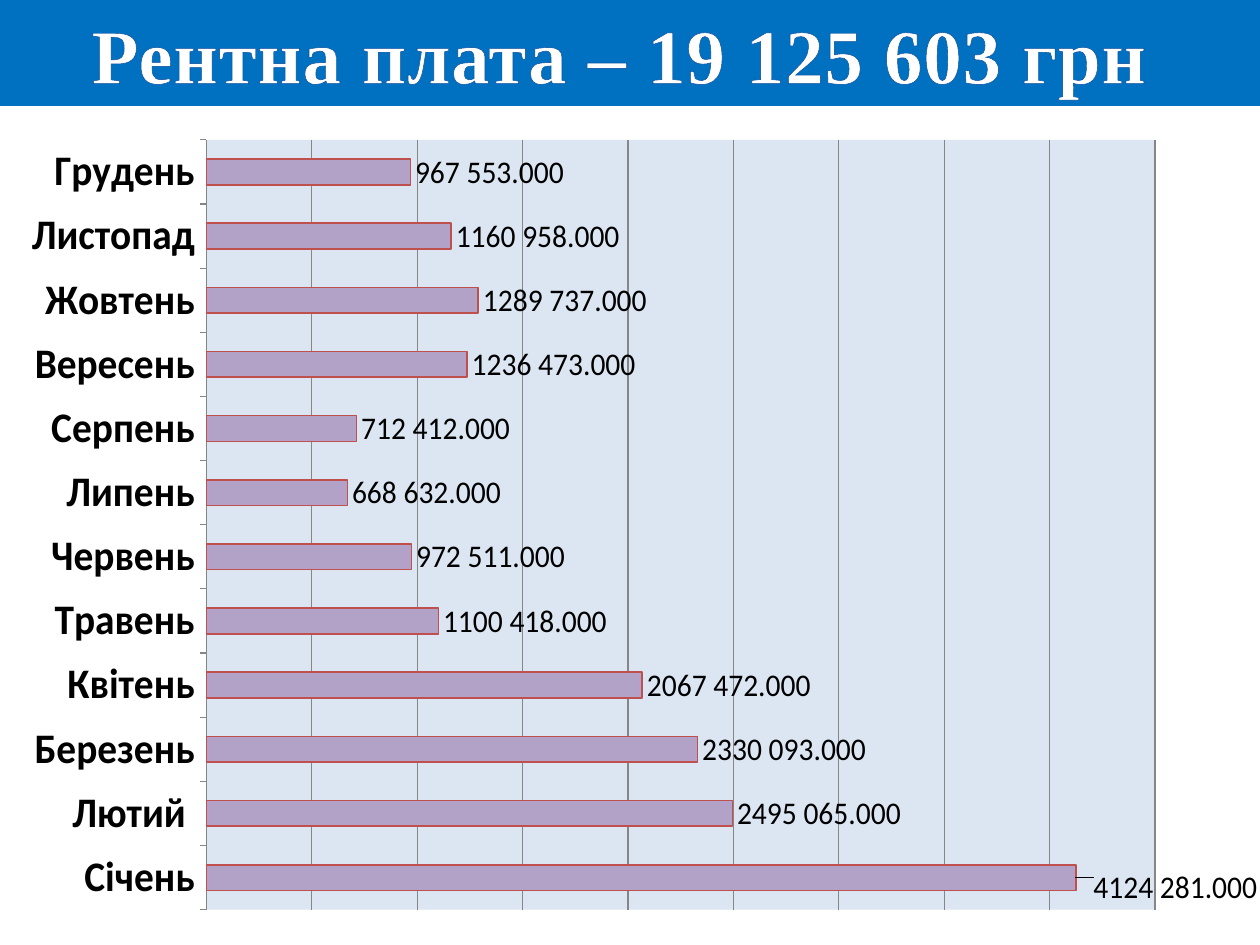
from lxml import etree
from pptx import Presentation
from pptx.chart.data import CategoryChartData
from pptx.dml.color import RGBColor
from pptx.enum.chart import XL_CHART_TYPE, XL_LABEL_POSITION, XL_TICK_LABEL_POSITION, XL_TICK_MARK
from pptx.enum.shapes import MSO_SHAPE
from pptx.enum.text import MSO_ANCHOR, MSO_AUTO_SIZE, PP_ALIGN
from pptx.oxml import parse_xml
from pptx.oxml.ns import qn
from pptx.util import Pt

BAR_CLUSTERED = XL_CHART_TYPE.BAR_CLUSTERED
OUTSIDE_END = XL_LABEL_POSITION.OUTSIDE_END
LOW = XL_TICK_LABEL_POSITION.LOW
TICK_OUTSIDE, TICK_NONE = XL_TICK_MARK.OUTSIDE, XL_TICK_MARK.NONE
RECTANGLE = MSO_SHAPE.RECTANGLE
MIDDLE = MSO_ANCHOR.MIDDLE
FIT_SHAPE = MSO_AUTO_SIZE.SHAPE_TO_FIT_TEXT
CENTER = PP_ALIGN.CENTER

CHART_NS = 'xmlns:c="http://schemas.openxmlformats.org/drawingml/2006/chart"'
DRAWING_NS = 'xmlns:a="http://schemas.openxmlformats.org/drawingml/2006/main"'
NUMBER_FORMAT = r"#\ ##0.000"
PAYMENTS = {
    "Січень": 4124281,
    "Лютий ": 2495065,
    "Березень": 2330093,
    "Квітень": 2067472,
    "Травень": 1100418,
    "Червень": 972511,
    "Липень": 668632,
    "Серпень": 712412,
    "Вересень": 1236473,
    "Жовтень": 1289737,
    "Листопад": 1160958,
    "Грудень": 967553,
}


def color(hex_value):
    return RGBColor.from_string(hex_value)


def style_line(line, hex_value, width):
    line.color.rgb = color(hex_value)
    line.width = Pt(width)


def style_font(font, name, size, hex_value, bold=False):
    font.name = name
    font.size = Pt(size)
    font.bold = bold
    font.color.rgb = color(hex_value)


def manual_layout(**settings):
    parts = "".join(f'<c:{key} val="{value}"/>' for key, value in settings.items())
    return parse_xml(f"<c:layout {CHART_NS}><c:manualLayout>{parts}</c:manualLayout></c:layout>")


def style_plot_area(plot_area):
    for layout in plot_area.findall(qn("c:layout")):
        plot_area.remove(layout)
    plot_area.insert(0, manual_layout(layoutTarget="inner", xMode="edge", yMode="edge",
                                      x=0.177, y=0.063, w=0.803, h=0.896))
    plot_area.append(parse_xml(
        f'<c:spPr {CHART_NS} {DRAWING_NS}><a:solidFill><a:srgbClr val="DCE6F2"/>'
        "</a:solidFill></c:spPr>"))


def style_axes(chart):
    months = chart.category_axis
    months.major_tick_mark = TICK_OUTSIDE
    months.tick_label_position = LOW
    style_font(months.tick_labels.font, "Calibri", 24, "000000", bold=True)
    style_line(months.format.line, "868686", 0.75)

    amounts = chart.value_axis
    amounts.visible = False
    amounts.major_tick_mark = TICK_NONE
    amounts.minimum_scale = 0
    amounts.maximum_scale = 4500000
    amounts.major_unit = 500000
    amounts.has_major_gridlines = True
    style_line(amounts.major_gridlines.format.line, "868686", 0.75)
    amounts.tick_labels.number_format = NUMBER_FORMAT
    amounts.tick_labels.number_format_is_linked = False


def label_bars(series):
    """Show values at the bar ends; the January label is moved, with a leader line."""
    labels = series.data_labels
    labels.show_value = True
    labels.position = OUTSIDE_END
    labels.number_format = NUMBER_FORMAT
    labels.number_format_is_linked = False
    style_font(labels.font, "Calibri", 18, "000000")

    january = series.points[0].data_label
    january.position = OUTSIDE_END
    style_font(january.font, "Calibri", 18, "000000")
    series_labels = series._element.find(qn("c:dLbls"))
    index = series_labels.find(qn("c:dLbl")).find(qn("c:idx"))
    index.addnext(parse_xml(
        f'<c:numFmt {CHART_NS} formatCode="{NUMBER_FORMAT}" sourceLinked="0"/>'))
    index.addnext(manual_layout(x=0.011, y=0.011))
    series_labels.append(parse_xml(
        f'<c:extLst {CHART_NS}><c:ext uri="{{CE6537A1-D6FC-4f65-9D91-7224C49458BB}}" '
        'xmlns:c15="http://schemas.microsoft.com/office/drawing/2012/chart">'
        '<c15:showLeaderLines val="1"/></c:ext></c:extLst>'))


def add_payment_chart(slide, left, top, width, height):
    data = CategoryChartData(number_format=NUMBER_FORMAT)
    data.categories = list(PAYMENTS)
    data.add_series("Series 1", list(PAYMENTS.values()))
    chart = slide.shapes.add_chart(
        BAR_CLUSTERED, Pt(left), Pt(top), Pt(width), Pt(height), data).chart
    chart.has_title = False
    chart.has_legend = False
    style_font(chart.font, "Calibri", 18, "000000")
    style_axes(chart)

    plot = chart.plots[0]
    plot.gap_width = 150
    plot.vary_by_categories = False
    series = plot.series[0]
    series.format.fill.solid()
    series.format.fill.fore_color.rgb = color("B3A2C7")
    style_line(series.format.line, "C0504D", 1)
    label_bars(series)
    style_plot_area(chart._chartSpace.chart.plotArea)


def outline_text(run, hex_value, width):
    properties = run.font._element if hasattr(run.font, "_element") else run._r.get_or_add_rPr()
    line = etree.Element(qn("a:ln"), w=str(Pt(width)))
    fill = etree.SubElement(line, qn("a:solidFill"))
    etree.SubElement(fill, qn("a:srgbClr"), val=hex_value)
    properties.insert(0, line)


def add_title_band(slide, left, top, width, height):
    band = slide.shapes.add_shape(RECTANGLE, Pt(left), Pt(top), Pt(width), Pt(height))
    band.shadow.inherit = False
    band.fill.solid()
    band.fill.fore_color.rgb = color("0070C0")
    band.line.fill.background()
    frame = band.text_frame
    frame.word_wrap = True
    frame.auto_size = FIT_SHAPE
    frame.vertical_anchor = MIDDLE
    paragraph = frame.paragraphs[0]
    paragraph.alignment = CENTER
    run = paragraph.add_run()
    run.text = "Рентна плата – 19 125 603 грн "
    style_font(run.font, "Times New Roman", 44, "FFFFFF", bold=True)
    run._r.get_or_add_rPr().set("spc", "50")
    outline_text(run, "054697", 1)


def main():
    presentation = Presentation()
    presentation.slide_width, presentation.slide_height = Pt(720), Pt(540)
    slide = presentation.slides.add_slide(presentation.slide_layouts[6])
    add_payment_chart(slide, -1.5, 49, 720, 491)
    add_title_band(slide, 0, 0, 720, 60.5)
    presentation.save("out.pptx")


if __name__ == "__main__":
    main()
